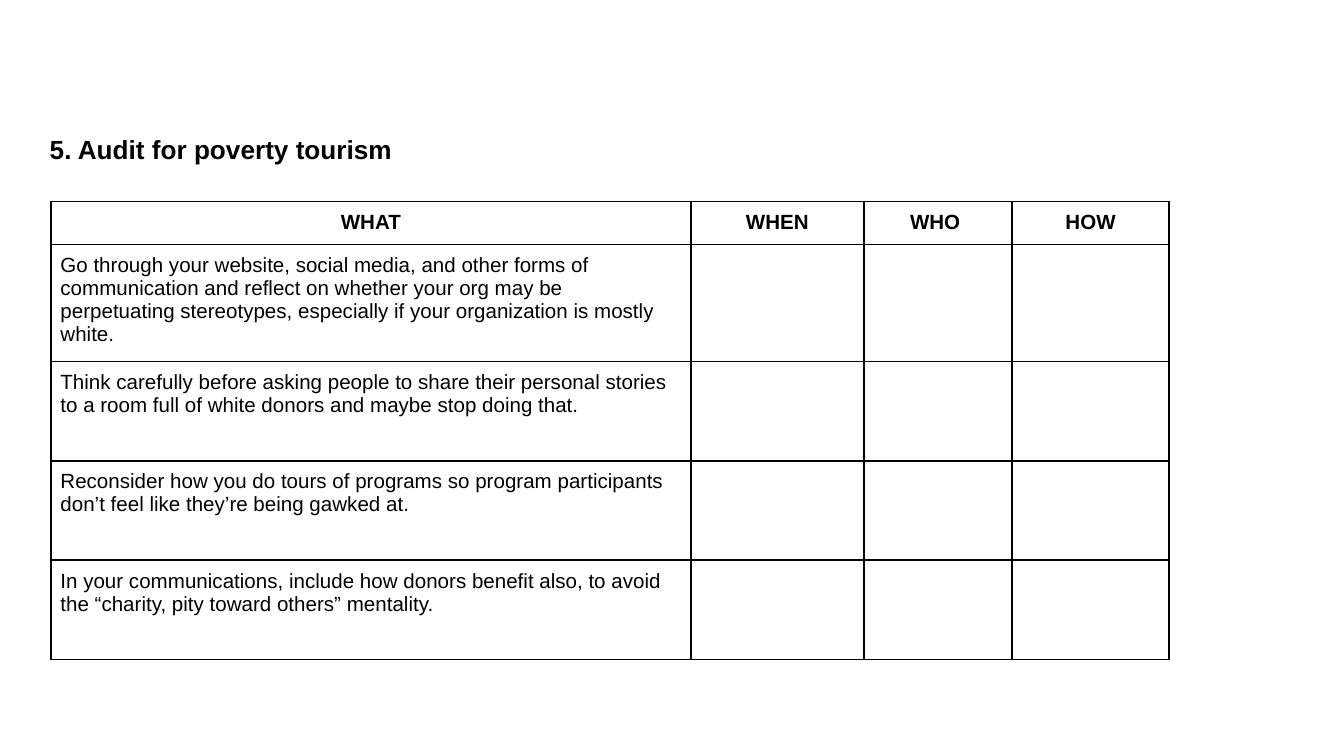
from lxml import etree
from pptx import Presentation
from pptx.dml.color import RGBColor
from pptx.enum.text import MSO_ANCHOR, MSO_AUTO_SIZE, PP_ALIGN
from pptx.oxml.ns import qn
from pptx.util import Inches, Pt

LEFT, CENTER = PP_ALIGN.LEFT, PP_ALIGN.CENTER
MIDDLE, NO_FIT = MSO_ANCHOR.MIDDLE, MSO_AUTO_SIZE.NONE
BLACK = RGBColor(0x00, 0x00, 0x00)

COLUMNS = [4.76, 1.29, 1.1, 1.17]
ROWS = [0.32, 0.87, 0.74, 0.74, 0.74]
HEADINGS = ["WHAT", "WHEN", "WHO ", "HOW"]
ACTIONS = [
    "Go through your website, social media, and other forms of communication and reflect on "
    "whether your org may be perpetuating stereotypes, especially if your organization is mostly white.",
    "Think carefully before asking people to share their personal stories to a room full of "
    "white donors and maybe stop doing that.",
    "Reconsider how you do tours of programs so program participants don’t feel like they’re "
    "being gawked at.",
    "In your communications, include how donors benefit also, to avoid the “charity, pity "
    "toward others” mentality.",
]


def write(frame, text, size, bold, align):
    para = frame.paragraphs[0]
    para.alignment = align
    span = para.add_run()
    span.text = text
    span.font.color.rgb = BLACK
    for name, value in {"name": "Arial", "size": Pt(size), "bold": bold}.items():
        setattr(span.font, name, value)


def add_borders(cell):
    properties = cell._tc.get_or_add_tcPr()
    for position, side in enumerate(("a:lnL", "a:lnR", "a:lnT", "a:lnB")):
        line = etree.Element(qn(side), w=str(Pt(1)))
        fill = etree.SubElement(line, qn("a:solidFill"))
        etree.SubElement(fill, qn("a:srgbClr"), val=str(BLACK))
        properties.insert(position, line)


deck = Presentation()
deck.slide_width = Inches(10)
deck.slide_height = deck.slide_width * 9 // 16
page = deck.slides.add_slide(deck.slide_layouts.get_by_name("Title Only"))

title = page.shapes.title
title.left, title.top = Inches(0.27), Inches(0.94)
title.width, title.height = deck.slide_width // 2, Inches(0.34)
title.text_frame.auto_size = NO_FIT
title.text_frame.vertical_anchor = MIDDLE
write(title.text_frame, "5. Audit for poverty tourism", 14, True, LEFT)

table = page.shapes.add_table(
    len(ROWS), len(COLUMNS), Inches(0.38), Inches(1.5),
    Inches(sum(COLUMNS)), Inches(sum(ROWS))).table
table.first_row = table.horz_banding = False
for column, width in zip(table.columns, COLUMNS):
    column.width = Inches(width)
for row, height in zip(table.rows, ROWS):
    row.height = Inches(height)

for cell in table.iter_cells():
    for side in ("left", "right", "top", "bottom"):
        setattr(cell, f"margin_{side}", Inches(0.07))
    cell.fill.background()
    add_borders(cell)

for index, heading in enumerate(HEADINGS):
    write(table.cell(0, index).text_frame, heading, 11, True, CENTER)
for index, action in enumerate(ACTIONS, start=1):
    write(table.cell(index, 0).text_frame, action, 11, False, LEFT)

deck.save("out.pptx")
